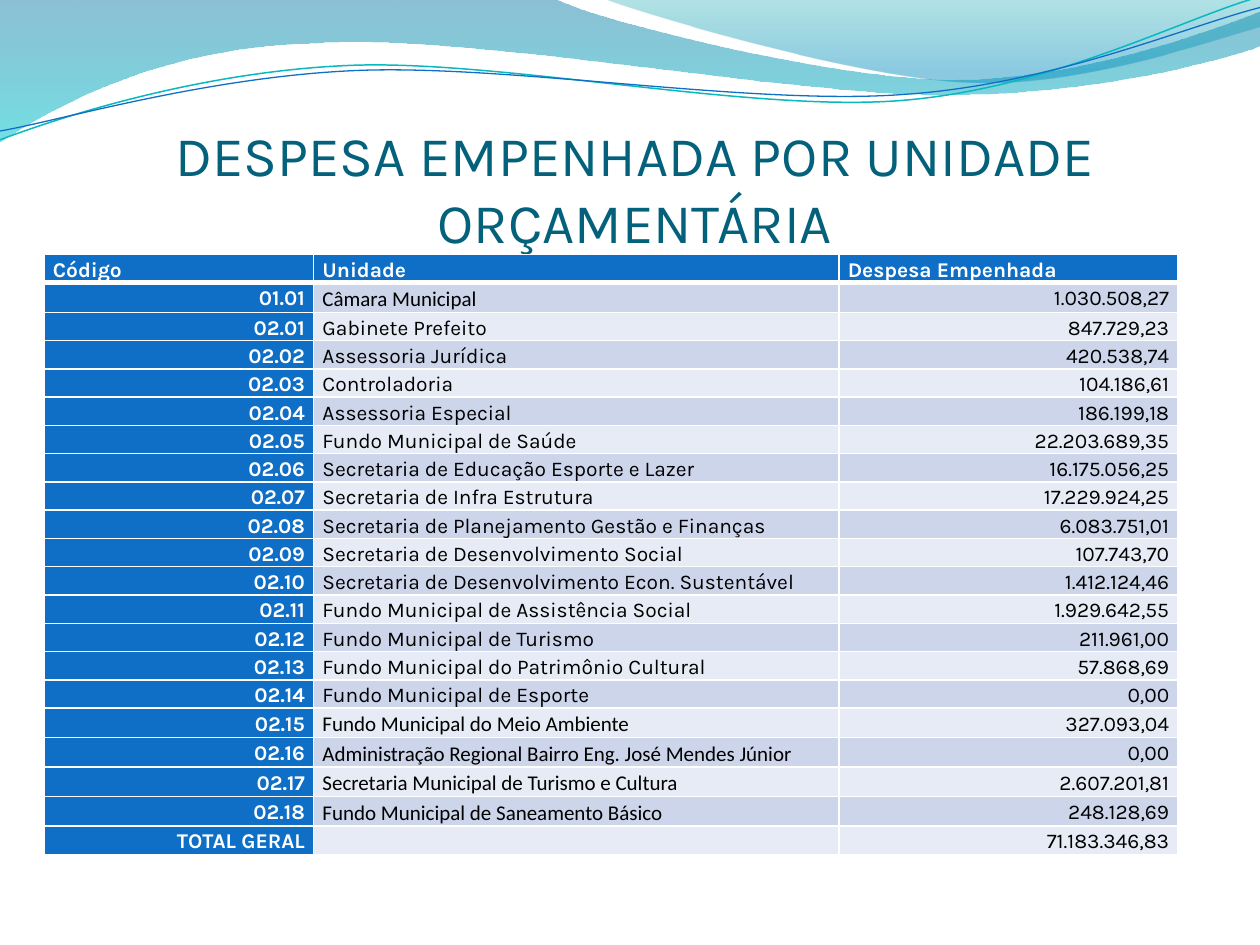
from lxml import etree
from pptx import Presentation
from pptx.dml.color import RGBColor
from pptx.enum.text import MSO_ANCHOR, PP_ALIGN
from pptx.oxml.ns import qn
from pptx.util import Inches, Pt

LEFT, CENTER, RIGHT = PP_ALIGN.LEFT, PP_ALIGN.CENTER, PP_ALIGN.RIGHT
BOTTOM = MSO_ANCHOR.BOTTOM

# Content
TITLE = "DESPESA EMPENHADA POR UNIDADE ORÇAMENTÁRIA"
HEADER = ("Código", "Unidade", "Despesa Empenhada")
EXPENSES = [
    ("01.01", "Câmara Municipal", "1.030.508,27"),
    ("02.01", "Gabinete Prefeito", "847.729,23"),
    ("02.02", "Assessoria Jurídica", "420.538,74"),
    ("02.03", "Controladoria", "104.186,61"),
    ("02.04", "Assessoria Especial", "186.199,18"),
    ("02.05", "Fundo Municipal de Saúde", "22.203.689,35"),
    ("02.06", "Secretaria de Educação Esporte e Lazer", "16.175.056,25"),
    ("02.07", "Secretaria de Infra Estrutura", "17.229.924,25"),
    ("02.08", "Secretaria de Planejamento Gestão e Finanças", "6.083.751,01"),
    ("02.09", "Secretaria de Desenvolvimento Social", "107.743,70"),
    ("02.10", "Secretaria de Desenvolvimento Econ. Sustentável", "1.412.124,46"),
    ("02.11", "Fundo Municipal de Assistência Social", "1.929.642,55"),
    ("02.12", "Fundo Municipal de Turismo", "211.961,00"),
    ("02.13", "Fundo Municipal do Patrimônio Cultural", "57.868,69"),
    ("02.14", "Fundo Municipal de Esporte", "0,00"),
    ("02.15", "Fundo Municipal do Meio Ambiente", "327.093,04"),
    ("02.16", "Administração Regional Bairro Eng. José Mendes Júnior", "0,00"),
    ("02.17", "Secretaria Municipal de Turismo e Cultura", "2.607.201,81"),
    ("02.18", "Fundo Municipal de Saneamento Básico", "248.128,69"),
    ("TOTAL GERAL", "", "71.183.346,83"),
]
CALIBRI_UNITS = {"01.01", "02.15", "02.16", "02.17", "02.18"}

THEME = {
    "title": "04617B", "accent": "0F6FC6", "white": "FFFFFF", "text": "000000",
    "bands": ("CCD5EA", "E7EBF5"), "font": "Karla", "alt_font": "Calibri",
    "title_size": 32, "cell_size": 12,
}

# Wave outlines in inches: one point is a straight line, three are a curve
BANDS = [
    {"start": (0, 0),
     "steps": [[(4.4, -0.01)],
               [(4.76, 0.17), (6.64, 0.63), (7.58, 0.63)],
               [(8.53, 0.63), (9.58, 0.26), (10, 0.09)],
               [(10.01, 0.36)],
               [(9.83, 0.44), (8.7, 0.76), (7.46, 0.75)],
               [(6.22, 0.75), (3.82, 0.28), (2.57, 0.34)],
               [(1.29, 0.36), (0.46, 0.83), (-0.01, 1.13)]],
     "stops": [(0, "0074A1", 45), (1, "00C6CF", 55)]},
    {"start": (4.79, -0.01),
     "steps": [[(5.09, 0.11), (6.82, 0.62), (7.69, 0.65)],
               [(8.56, 0.69), (9.61, 0.32), (10, 0.21)],
               [(10, 0)]],
     "stops": [(0, "00A1A9", 30), (0.8, "008BBF", 45)]},
]
WAVE_LINES = [
    {"start": (0, 1.11),
     "steps": [[(0.48, 0.93), (1.58, 0.57), (2.77, 0.52)],
               [(3.95, 0.47), (5.93, 0.89), (7.13, 0.8)],
               [(8.33, 0.71), (9.38, 0.15), (9.98, -0.02)]],
     "color": "0AB8BF", "width": 0.85},
    {"start": (0, 1.04),
     "steps": [[(0.47, 0.96), (1.64, 0.61), (2.83, 0.56)],
               [(4.03, 0.51), (5.97, 0.84), (7.17, 0.75)],
               [(8.36, 0.67), (9.41, 0.21), (10, 0.06)]],
     "color": "0F6FC6", "width": 0.75},
]


def rgb(value):
    return RGBColor.from_string(value)


def add_wave(shapes, start, steps, close):
    points = [(Inches(x), Inches(y)) for step in steps for x, y in step]
    builder = shapes.build_freeform(Inches(start[0]), Inches(start[1]))
    builder.add_line_segments(points, close=close)
    sp = builder.convert_to_shape()
    sp.shadow.inherit = False
    # Join each group of three points into one Bézier curve
    segments = iter(sp.element.xpath(".//a:path/a:lnTo"))
    for step in steps:
        group = [next(segments) for _ in step]
        if len(group) == 3:
            curve = etree.Element(qn("a:cubicBezTo"))
            group[0].addprevious(curve)
            for segment in group:
                curve.append(segment[0])
                segment.getparent().remove(segment)
    return sp


def fill_gradient(sp, stops):
    sp.fill.gradient()
    sp.fill.gradient_angle = 270
    for stop, (position, color, _) in zip(sp.fill.gradient_stops, stops):
        stop.position, stop.color.rgb = position, rgb(color)
    for clr, (_, _, opacity) in zip(sp.element.xpath(".//a:gs/a:srgbClr"), stops):
        etree.SubElement(clr, qn("a:alpha"), val=str(opacity * 1000))


def write(p, text, align, size, font, color, bold=False):
    p.alignment = align
    r = p.add_run()
    r.text = text
    for name, value in {"size": Pt(size), "name": font, "bold": bold}.items():
        setattr(r.font, name, value)
    r.font.color.rgb = rgb(color)


def set_borders(cell, widths):
    tc_pr = cell._tc.get_or_add_tcPr()
    for side, width in widths.items():
        ln = etree.SubElement(tc_pr, qn("a:ln" + side), w=str(Pt(width)))
        fill = etree.SubElement(ln, qn("a:solidFill"))
        etree.SubElement(fill, qn("a:srgbClr"), val=THEME["white"])


def format_cell(cell, row, col, text, font):
    strong = row == 0 or col == 0
    set_borders(cell, {"L": 1, "R": 1, "T": 3 if row == 1 else 1, "B": 3 if row == 0 else 1})
    cell.fill.solid()
    cell.fill.fore_color.rgb = rgb(THEME["accent"] if strong else THEME["bands"][(row - 1) % 2])
    margins = {"margin_left": 0.07, "margin_right": 0.07, "margin_top": 0, "margin_bottom": 0}
    for name, value in margins.items():
        setattr(cell, name, Inches(value))
    p = cell.text_frame.paragraphs[0]
    p.line_spacing = 1.15
    if text:
        align = LEFT if row == 0 or col == 1 else RIGHT
        color = THEME["white"] if strong else THEME["text"]
        write(p, text, align, THEME["cell_size"], font, color, strong)
    else:
        p._p.get_or_add_endParaRPr().set("sz", str(THEME["cell_size"] * 100))


def main():
    prs = Presentation()
    prs.slide_width, prs.slide_height = Inches(10), Inches(7.5)
    s = prs.slides.add_slide(prs.slide_layouts[5])

    # Wave decoration
    for band in BANDS:
        sp = add_wave(s.shapes, band["start"], band["steps"], True)
        fill_gradient(sp, band["stops"])
        sp.line.fill.background()
    for wave in WAVE_LINES:
        sp = add_wave(s.shapes, wave["start"], wave["steps"], False)
        sp.fill.background()
        sp.line.color.rgb = rgb(wave["color"])
        sp.line.width = Pt(wave["width"])

    # Title, brought in front of the waves
    title = s.shapes.title
    title.left, title.top, title.width, title.height = map(Inches, (0.5, 0.77, 9.08, 1.25))
    tf = title.text_frame
    frame = {"margin_left": 0, "margin_right": 0, "margin_top": Inches(0.05),
             "margin_bottom": 0, "vertical_anchor": BOTTOM, "word_wrap": True}
    for name, value in frame.items():
        setattr(tf, name, value)
    write(tf.paragraphs[0], TITLE, CENTER, THEME["title_size"], THEME["font"], THEME["title"])
    s.shapes.element.append(title.element)

    # Expense table
    rows = [HEADER] + EXPENSES
    table_shape = s.shapes.add_table(len(rows), len(HEADER), Inches(0.35), Inches(2.02),
                                     Inches(9), Inches(4.53))
    table = table_shape.table
    for column, width in zip(table.columns, (2.14, 4.17, 2.69)):
        column.width = Inches(width)
    for i, values in enumerate(rows):
        table.rows[i].height = Inches(0.19)
        for j, text in enumerate(values):
            alt = j == 1 and values[0] in CALIBRI_UNITS
            font = THEME["alt_font"] if alt else THEME["font"]
            format_cell(table.cell(i, j), i, j, text, font)
    table_shape.height = Inches(4.53)

    prs.save("out.pptx")


if __name__ == "__main__":
    main()
